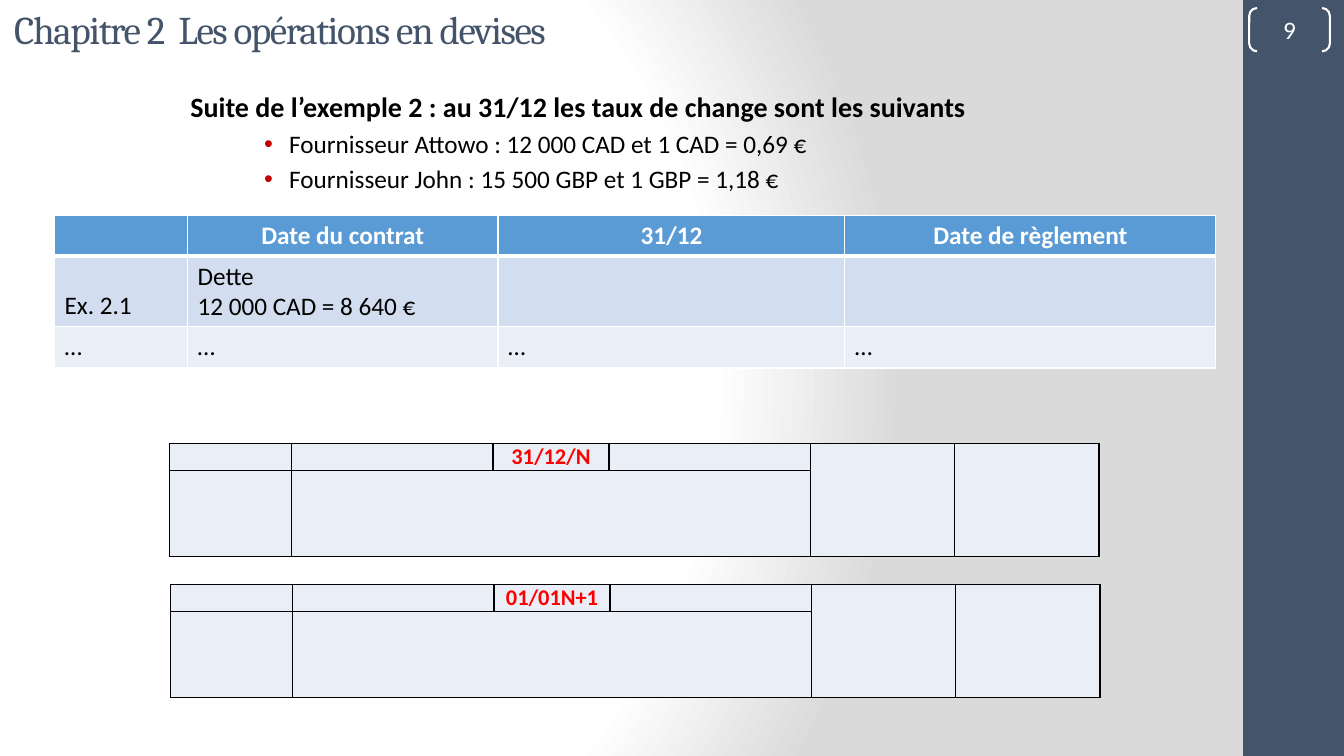
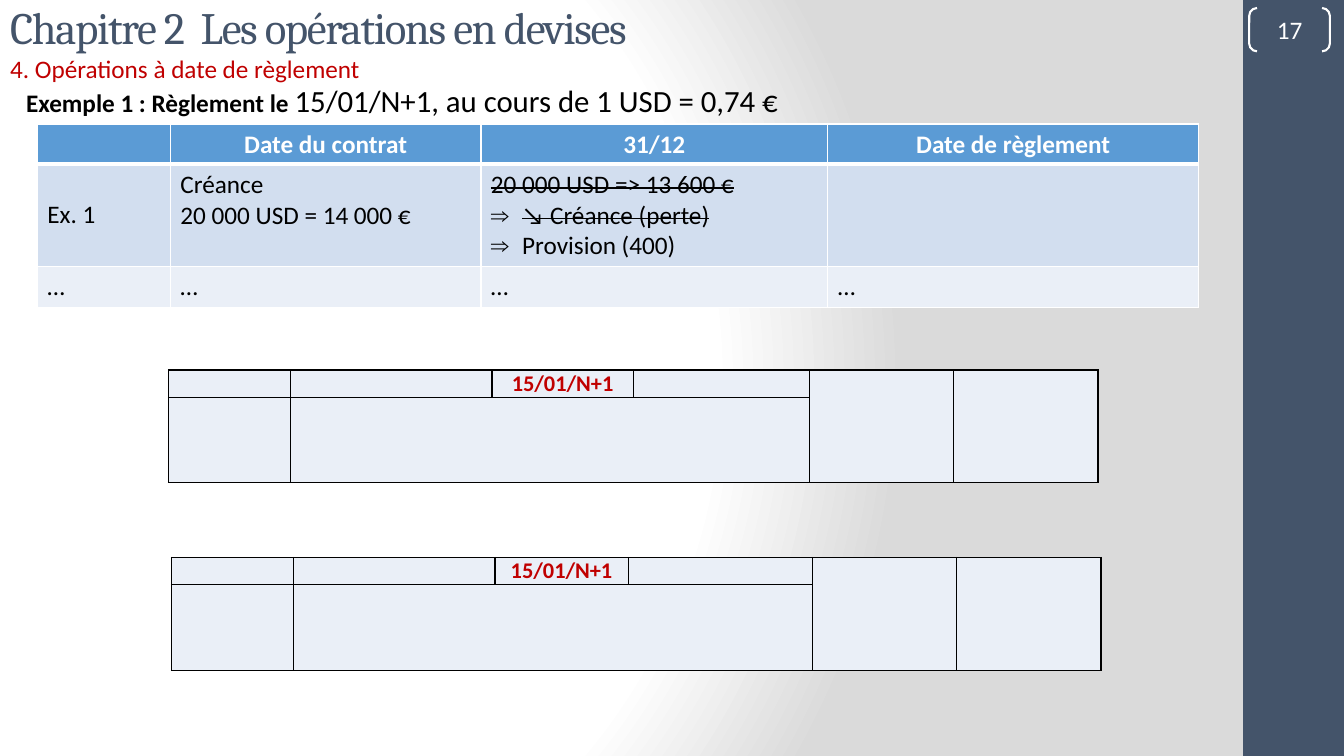
from dataclasses import dataclass

from pptx import Presentation
from pptx.dml.color import RGBColor
from pptx.enum.shapes import MSO_SHAPE
from pptx.enum.text import MSO_ANCHOR, MSO_AUTO_SIZE, PP_ALIGN
from pptx.oxml import parse_xml
from pptx.oxml.ns import nsdecls, qn
from pptx.util import Inches, Pt

RECT, BRACKETS = MSO_SHAPE.RECTANGLE, MSO_SHAPE.DOUBLE_BRACKET
TOP, MIDDLE, BOTTOM = MSO_ANCHOR.TOP, MSO_ANCHOR.MIDDLE, MSO_ANCHOR.BOTTOM
LEFT, CENTER = PP_ALIGN.LEFT, PP_ALIGN.CENTER
NO_FIT = MSO_AUTO_SIZE.NONE

COLORS = {
    "navy": "44546A",
    "header": "5B9BD5",
    "row": "D2DEEF",
    "pale": "EAEFF7",
    "white": "FFFFFF",
    "grey": "DADADA",
    "black": "000000",
    "crimson": "C00000",
    "red": "FF0000",
}
BODY_FONT, TITLE_FONT = "Calibri", "Cambria"
CHAPTER = "Chapitre 2  Les opérations en devises"
RATE_COLS = (1.32, 3.08, 3.44, 3.68)
RATE_HEADS = ("", "Date du contrat", "31/12", "Date de règlement")
JOURNAL_ROWS = (0.27, 0.85)


@dataclass
class Run:
    text: str
    size: float = 18
    color: str = "black"
    bold: bool = False
    strike: bool = False
    font: str = BODY_FONT
    spacing: int = 0


@dataclass
class Para:
    runs: list[Run]
    align: PP_ALIGN = LEFT
    indent: float = 0
    hanging: float = 0
    before: float = 0
    bullet: str = ""
    bullet_color: str = "black"


@dataclass
class Journal:
    left: float
    top: float
    date: str
    color: str
    date_width: float
    rest_width: float


def rgb(name: str) -> RGBColor:
    return RGBColor.from_string(COLORS[name])


def write(tf, paras: list[Para]) -> None:
    for i, para in enumerate(paras):
        p = tf.paragraphs[0] if i == 0 else tf.add_paragraph()
        pPr = p._p.get_or_add_pPr()
        pPr.set("marL", str(Inches(para.indent)))
        pPr.set("indent", str(Inches(-para.hanging)))
        if para.bullet:
            pPr.append(parse_xml(
                f'<a:buClr {nsdecls("a")}><a:srgbClr val="{COLORS[para.bullet_color]}"/></a:buClr>'))
            pPr.append(parse_xml(f'<a:buFont {nsdecls("a")} typeface="Arial"/>'))
            pPr.append(parse_xml(f'<a:buChar {nsdecls("a")} char="{para.bullet}"/>'))
        p.alignment = para.align
        if i:
            p.space_before = Pt(para.before)
        for run in para.runs:
            r = p.add_run()
            r.text = run.text
            r.font.name, r.font.size, r.font.bold = run.font, Pt(run.size), run.bold
            r.font.color.rgb = rgb(run.color)
            if run.strike:
                r._r.get_or_add_rPr().set("strike", "sngStrike")
            if run.spacing:
                r._r.get_or_add_rPr().set("spc", str(run.spacing))


def set_background(master) -> None:
    master.background.fill.gradient()
    grad = next(master.element.iter(qn("a:gradFill")))
    stops = "".join(
        f'<a:gs pos="{pos}"><a:srgbClr val="{COLORS[name]}"/></a:gs>'
        for pos, name in ((0, "white"), (75000, "white"), (100000, "grey")))
    grad.getparent().replace(grad, parse_xml(
        f'<a:gradFill {nsdecls("a")} rotWithShape="1"><a:gsLst>{stops}</a:gsLst>'
        '<a:path path="circle"><a:fillToRect l="20000" t="50000" r="100000" b="50000"/>'
        '</a:path></a:gradFill>'))


def add_slide(prs, number: int, title: list[Para], box: tuple[float, ...]):
    slide = prs.slides.add_slide(prs.slide_layouts[5])
    band = slide.shapes.add_shape(RECT, Inches(12.33), 0, Inches(1), prs.slide_height)
    band.shadow.inherit = False
    band.fill.solid()
    band.fill.fore_color.rgb = rgb("navy")
    band.line.fill.background()

    sp = slide.shapes.title
    sp.left, sp.top, sp.width, sp.height = map(Inches, box)
    tf = sp.text_frame
    tf.auto_size, tf.vertical_anchor = NO_FIT, MIDDLE
    write(tf, title)

    badge = slide.shapes.add_shape(
        BRACKETS, Inches(12.39), Inches(0.08), Inches(0.8), Inches(0.43))
    badge.shadow.inherit = False
    badge.adjustments[0] = 0.18
    badge.fill.background()
    badge.line.color.rgb = rgb("white")
    badge.line.width = Pt(1.5)
    tf = badge.text_frame
    tf.margin_left = tf.margin_right = tf.margin_top = tf.margin_bottom = 0
    tf.vertical_anchor = MIDDLE
    write(tf, [Para([Run(str(number), color="white")], CENTER)])
    return slide


def add_text(slide, box: tuple[float, ...], paras: list[Para]) -> None:
    tf = slide.shapes.add_textbox(*map(Inches, box)).text_frame
    tf.word_wrap = True
    write(tf, paras)


def add_grid(slide, left: float, top: float, cols: tuple[float, ...], rows: tuple[float, ...]):
    table = slide.shapes.add_table(
        len(rows), len(cols), Inches(left), Inches(top),
        Inches(sum(cols)), Inches(sum(rows))).table
    table.first_row = table.horz_banding = False
    for col, width in zip(table.columns, cols):
        col.width = Inches(width)
    for row, height in zip(table.rows, rows):
        row.height = Inches(height)
    return table


def style_cell(cell, fill: str, border: str, bottom: float = 1, top: float = 1) -> None:
    tcPr = cell._tc.get_or_add_tcPr()
    for side, width in (("L", 1), ("R", 1), ("T", top), ("B", bottom)):
        tcPr.append(parse_xml(
            f'<a:ln{side} {nsdecls("a")} w="{Pt(width)}"><a:solidFill>'
            f'<a:srgbClr val="{COLORS[border]}"/></a:solidFill></a:ln{side}>'))
    cell.fill.solid()
    cell.fill.fore_color.rgb = rgb(fill)


def add_rates(slide, left: float, top: float, heights: tuple[float, ...],
              label: str, label_anchor: MSO_ANCHOR,
              contract: list[Para], closing: list[Para]) -> None:
    table = add_grid(slide, left, top, RATE_COLS, heights)
    heads = [[Para([Run(h, color="white", bold=True)], CENTER)] if h else []
             for h in RATE_HEADS]
    body = [[Para([Run(label)])], contract, closing, []]
    dots = [[Para([Run("…")])]] * len(RATE_COLS)
    fills = ("header", "row", "pale")
    for i, (row, fill) in enumerate(zip((heads, body, dots), fills)):
        for j, paras in enumerate(row):
            cell = table.cell(i, j)
            style_cell(cell, fill, "white", 3 if i == 0 else 1, 3 if i == 1 else 1)
            cell.vertical_anchor = MIDDLE if i == 0 else TOP
            write(cell.text_frame, paras)
    table.cell(1, 0).vertical_anchor = label_anchor


def add_journal(slide, journal: Journal) -> None:
    cols = (1.21, 2, journal.date_width, journal.rest_width, 1.43, 1.43)
    table = add_grid(slide, journal.left, journal.top, cols, JOURNAL_ROWS)
    for cell in table.iter_cells():
        style_cell(cell, "pale", "black")
        cell.margin_left = cell.margin_right = Inches(0.05)
        cell.margin_top = cell.margin_bottom = 0
        cell.text_frame.paragraphs[0]._p.get_or_add_endParaRPr().set("sz", "1000")
    write(table.cell(0, 2).text_frame,
          [Para([Run(journal.date, 16, journal.color, True)], CENTER)])
    table.cell(1, 1).merge(table.cell(1, 3))
    for col in (4, 5):
        table.cell(0, col).merge(table.cell(1, col))


def chapter_title(size: float) -> Para:
    return Para([Run(CHAPTER, size, "navy", font=TITLE_FONT, spacing=-100)])


def build_closing_rates(prs) -> None:
    slide = add_slide(prs, 9, [chapter_title(28)], (0.04, -0.02, 11.11, 0.62))
    suppliers = ("Fournisseur Attowo : 12 000 CAD et 1 CAD = 0,69 €",
                 "Fournisseur John : 15 500 GBP et 1 GBP = 1,18 €")
    heading = "Suite de l’exemple 2 : au 31/12 les taux de change sont les suivants"
    add_text(slide, (1.67, 0.84, 9.25, 1.15), [
        Para([Run(heading, 20, bold=True)], indent=0.12),
        *(Para([Run(s)], indent=1.1, hanging=0.25, before=3.6,
               bullet="•", bullet_color="crimson") for s in suppliers)])
    for journal in (Journal(1.68, 4.4, "31/12/N", "red", 1.15, 2),
                    Journal(1.69, 5.8, "01/01N+1", "red", 1.15, 2)):
        add_journal(slide, journal)
    add_rates(slide, 0.54, 2.14, (0.4, 0.7, 0.41), "Ex. 2.1", BOTTOM,
              [Para([Run("Dette")]), Para([Run("12 000 CAD = 8 640 €")])], [])


def build_settlement(prs) -> None:
    subtitle = Para([Run("4. Opérations à date de règlement", color="crimson")])
    slide = add_slide(prs, 17, [chapter_title(32), subtitle], (0, 0, 11.11, 0.83))
    add_text(slide, (0.04, 0.76, 12.19, 0.46), [Para([
        Run("Exemple 1 : Règlement le ", bold=True),
        Run("15/01/N+1, au cours de 1 USD = 0,74 €", 22)], indent=0.12)])
    for journal in (Journal(1.67, 3.67, "15/01/N+1", "crimson", 1.4, 1.75),
                    Journal(1.7, 5.53, "15/01/N+1", "crimson", 1.32, 1.83)):
        add_journal(slide, journal)
    effects = [Para([Run(text, strike=strike)], indent=0.31, hanging=0.31, bullet="⇒")
               for text, strike in (("↘ Créance (perte)", True), ("Provision (400)", False))]
    add_rates(slide, 0.37, 1.23, (0.4, 1.01, 0.41), "Ex. 1", MIDDLE,
              [Para([Run("Créance")]), Para([Run("20 000 USD = 14 000 €")])],
              [Para([Run("20 000 USD => 13 600 €", strike=True)]), *effects])


def main() -> None:
    prs = Presentation()
    prs.slide_width, prs.slide_height = Inches(13.33), Inches(7.5)
    set_background(prs.slide_master)
    build_closing_rates(prs)
    build_settlement(prs)
    prs.save("out.pptx")


if __name__ == "__main__":
    main()
